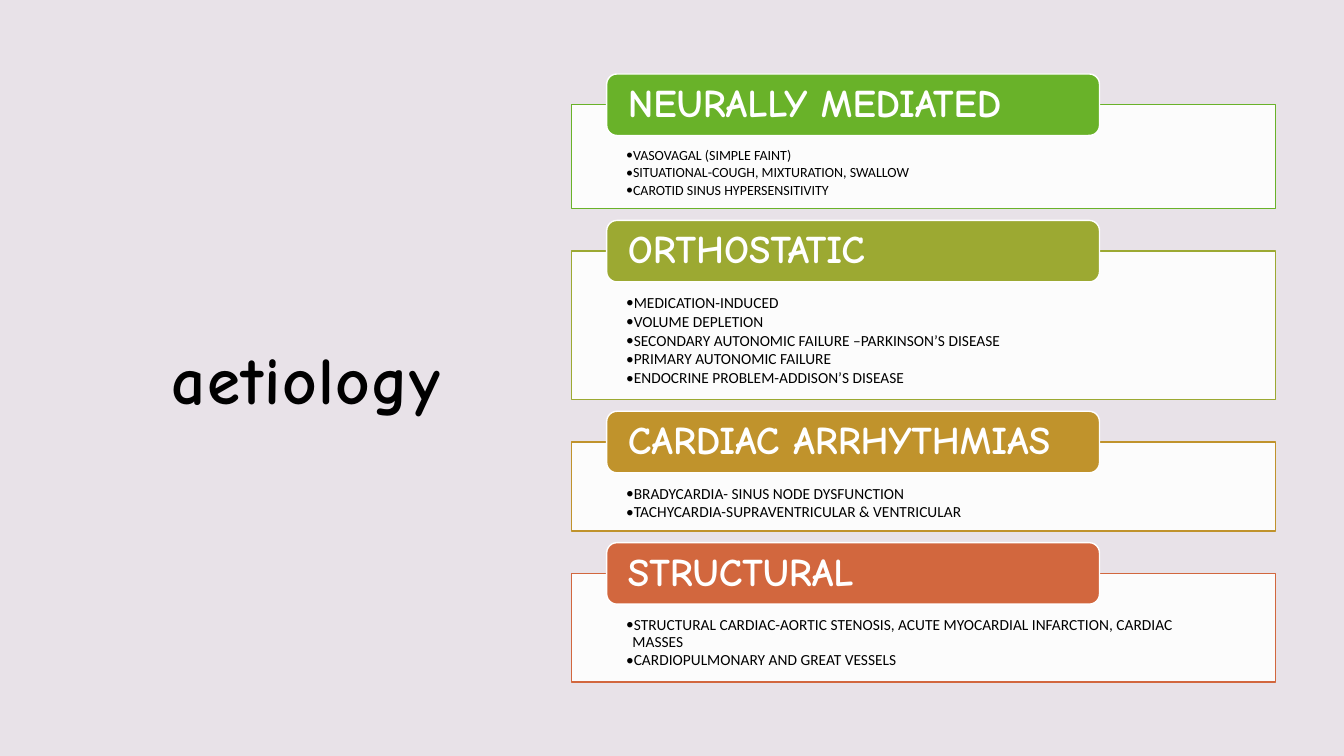
from dataclasses import dataclass

from lxml import etree
from pptx import Presentation
from pptx.dml.color import RGBColor
from pptx.enum.shapes import MSO_SHAPE
from pptx.enum.text import MSO_ANCHOR, PP_ALIGN
from pptx.oxml.ns import qn
from pptx.util import Cm, Pt

RECT = MSO_SHAPE.RECTANGLE
ROUND_RECT = MSO_SHAPE.ROUNDED_RECTANGLE
TOP, MIDDLE = MSO_ANCHOR.TOP, MSO_ANCHOR.MIDDLE
LEFT, CENTER = PP_ALIGN.LEFT, PP_ALIGN.CENTER

LILAC = RGBColor(0xE8, 0xE2, 0xE8)
BLACK = RGBColor(0x00, 0x00, 0x00)
WHITE = RGBColor(0xFF, 0xFF, 0xFF)
GREEN = RGBColor(0x69, 0xB2, 0x29)
OLIVE = RGBColor(0x9C, 0xA9, 0x32)
GOLD = RGBColor(0xC0, 0x93, 0x2C)
ORANGE = RGBColor(0xD2, 0x67, 0x3E)

HEAD_FONT, BODY_FONT = "Comic Neue", "Calibri"
SLIDE_WIDTH, SLIDE_HEIGHT = 33.87, 19.05
PANEL_LEFT, PANEL_WIDTH, FIRST_TOP, GAP = 14.4, 17.74, 2.64, 1.07
TAB_LEFT, TAB_WIDTH, TAB_HEIGHT = 15.29, 12.42, 1.55
BULLET_INDENT = Cm(0.16)


@dataclass
class Cause:
    name: str
    color: RGBColor
    height: float
    size: int
    items: list[str]


CAUSES = [
    Cause("NEURALLY MEDIATED", GREEN, 2.62, 10, [
        "VASOVAGAL (SIMPLE FAINT)",
        "SITUATIONAL-COUGH, MIXTURATION, SWALLOW",
        "CAROTID SINUS HYPERSENSITIVITY",
    ]),
    Cause("ORTHOSTATIC", OLIVE, 3.74, 11, [
        "MEDICATION-INDUCED",
        "VOLUME DEPLETION",
        "SECONDARY AUTONOMIC FAILURE –PARKINSON’S DISEASE",
        "PRIMARY AUTONOMIC FAILURE",
        "ENDOCRINE PROBLEM-ADDISON’S DISEASE",
    ]),
    Cause("CARDIAC ARRHYTHMIAS", GOLD, 2.24, 11, [
        "BRADYCARDIA- SINUS NODE DYSFUNCTION",
        "TACHYCARDIA-SUPRAVENTRICULAR & VENTRICULAR",
    ]),
    Cause("STRUCTURAL", ORANGE, 2.74, 11, [
        "STRUCTURAL CARDIAC-AORTIC STENOSIS, ACUTE MYOCARDIAL INFARCTION, CARDIAC MASSES",
        "CARDIOPULMONARY AND GREAT VESSELS",
    ]),
]


def add_run(p, text: str, font: str, size: float, color: RGBColor, bold: bool = False):
    r = p.add_run()
    r.text = text
    r.font.name = font
    r.font.size = Pt(size)
    r.font.bold = bold
    r.font.color.rgb = color
    return r


def add_box(s, kind, left: float, top: float, width: float, height: float,
            fill: RGBColor, line: RGBColor | None):
    sp = s.shapes.add_shape(kind, Cm(left), Cm(top), Cm(width), Cm(height))
    sp.shadow.inherit = False
    sp.fill.solid()
    sp.fill.fore_color.rgb = fill
    if line is None:
        sp.line.fill.background()
    else:
        sp.line.color.rgb = line
        sp.line.width = Pt(1)
    sp.text_frame.word_wrap = True
    return sp


def set_frame(tf, anchor, side: float, top: float, bottom: float) -> None:
    tf.vertical_anchor = anchor
    tf.margin_left = tf.margin_right = Cm(side)
    tf.margin_top, tf.margin_bottom = Cm(top), Cm(bottom)


def set_bullet(p) -> None:
    p.level = 1
    pPr = p._p.get_or_add_pPr()
    pPr.set("marL", str(BULLET_INDENT))
    pPr.set("indent", str(-BULLET_INDENT))
    after = etree.SubElement(pPr, qn("a:spcAft"))
    etree.SubElement(after, qn("a:spcPct")).set("val", "15000")
    etree.SubElement(pPr, qn("a:buFont")).set("typeface", BODY_FONT)
    etree.SubElement(pPr, qn("a:buChar")).set("char", "•")


def add_panel(s, cause: Cause, top: float) -> None:
    sp = add_box(s, RECT, PANEL_LEFT, top, PANEL_WIDTH, cause.height, WHITE, cause.color)
    rgb = sp.fill._xPr.find(qn("a:solidFill")).find(qn("a:srgbClr"))
    etree.SubElement(rgb, qn("a:alpha")).set("val", "90000")
    tf = sp.text_frame
    set_frame(tf, TOP, 1.38, 1.1, 0.22)
    for i, item in enumerate(cause.items):
        p = tf.add_paragraph() if i else tf.paragraphs[0]
        p.alignment = LEFT
        p.line_spacing = 0.9
        set_bullet(p)
        add_run(p, item, BODY_FONT, cause.size, BLACK)


def add_tab(s, cause: Cause, panel_top: float) -> None:
    sp = add_box(s, ROUND_RECT, TAB_LEFT, panel_top - TAB_HEIGHT / 2,
                 TAB_WIDTH, TAB_HEIGHT, cause.color, WHITE)
    set_frame(sp.text_frame, MIDDLE, 0.46, 0, 0)
    p = sp.text_frame.paragraphs[0]
    p.alignment = LEFT
    p.line_spacing = 0.9
    add_run(p, cause.name, HEAD_FONT, 28, WHITE, True)


def add_backdrop(s) -> None:
    sp = add_box(s, RECT, 0, 0, SLIDE_WIDTH, SLIDE_HEIGHT, LILAC, None)
    s.shapes.title._element.addprevious(sp._element)


def add_title(s) -> None:
    sp = s.shapes.title
    sp.left, sp.top, sp.width, sp.height = Cm(2.46), Cm(2.7), Cm(10.52), Cm(13.64)
    tf = sp.text_frame
    tf.word_wrap = True
    tf.vertical_anchor = MIDDLE
    p = tf.paragraphs[0]
    p.alignment = CENTER
    r = add_run(p, "aetiology", HEAD_FONT, 48, BLACK, True)
    r._r.get_or_add_rPr().set("spc", "100")


def main() -> None:
    prs = Presentation()
    prs.slide_width, prs.slide_height = Cm(SLIDE_WIDTH), Cm(SLIDE_HEIGHT)
    s = prs.slides.add_slide(prs.slide_layouts.get_by_name("Title Only"))
    s.background.fill.solid()
    s.background.fill.fore_color.rgb = LILAC
    add_backdrop(s)
    add_title(s)
    top = FIRST_TOP
    for cause in CAUSES:
        add_panel(s, cause, top)
        add_tab(s, cause, top)
        top += cause.height + GAP
    prs.save("out.pptx")


if __name__ == "__main__":
    main()
